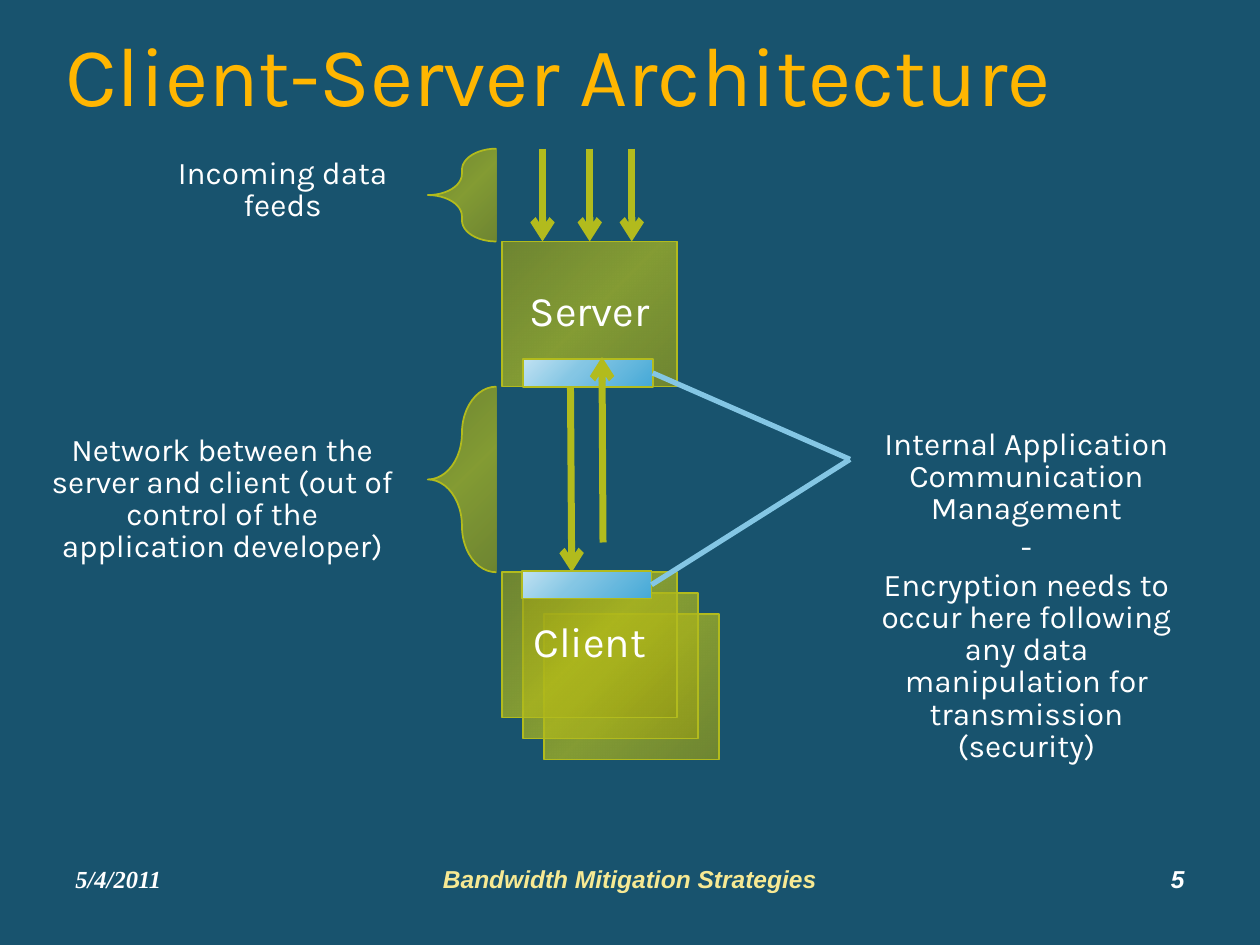
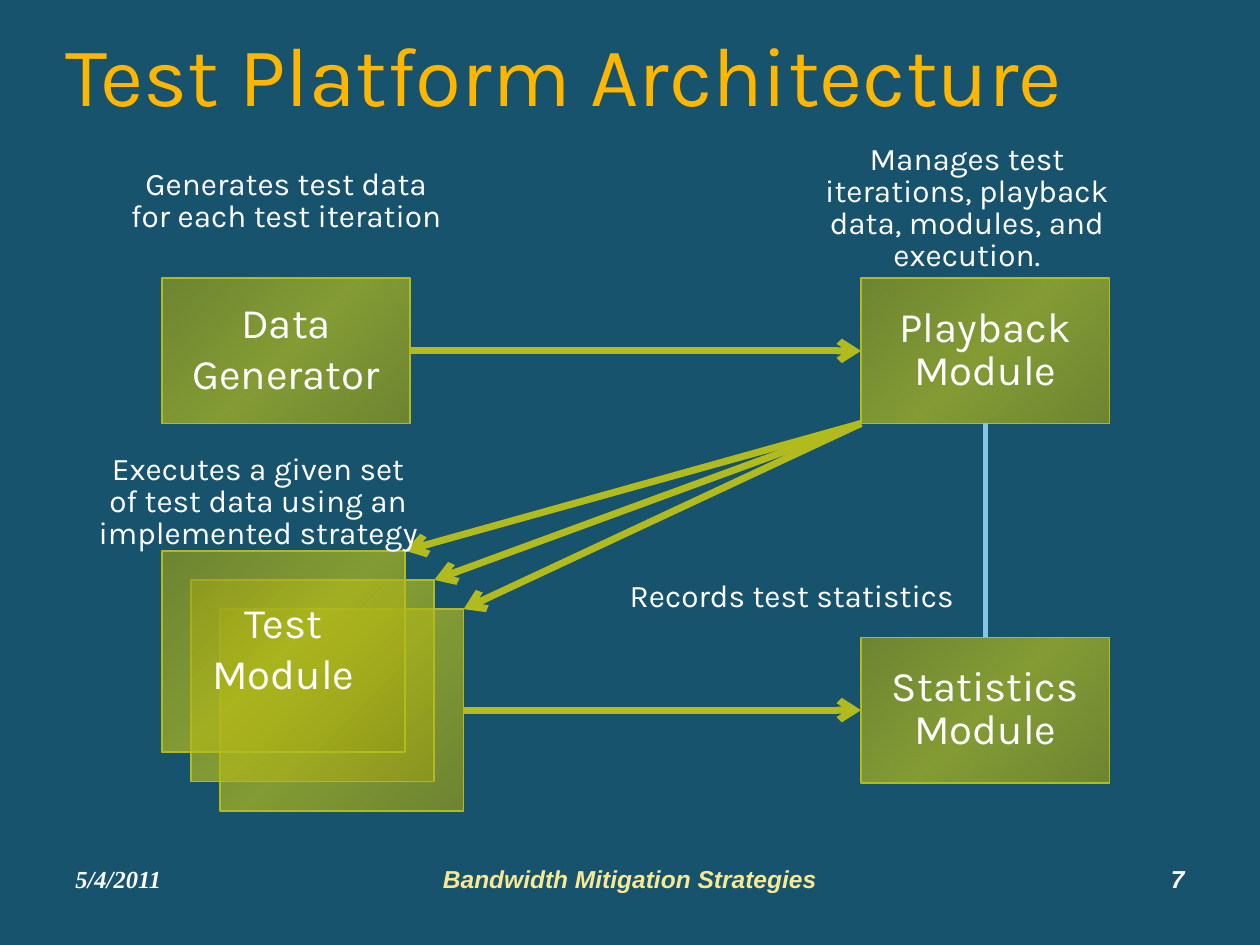
from collections import namedtuple

from lxml import etree
from pptx import Presentation
from pptx.dml.color import RGBColor
from pptx.enum import shapes, text
from pptx.oxml import ns, parse_xml
from pptx.util import Pt

BACKGROUND, WHITE, GOLD, CREAM = "18536E", "FFFFFF", "FFB601", "F7E993"
OLIVE, DARK_OLIVE, SKY = "B2BB1D", "929A18", "84C6E4"
OLIVE_STOPS = [(0, DARK_OLIVE), (50, OLIVE), (100, DARK_OLIVE)]
SKY_STOPS = [(0, "C1E2F2"), (42, SKY), (100, "46A9D7")]
FONT = "Karla"
CENTER, RIGHT = text.PP_ALIGN.CENTER, text.PP_ALIGN.RIGHT
TOP, MIDDLE = text.MSO_ANCHOR.TOP, text.MSO_ANCHOR.MIDDLE
RECT, BRACE = shapes.MSO_SHAPE.RECTANGLE, shapes.MSO_SHAPE.LEFT_BRACE


class Box(namedtuple("Box", "x y w h")):
    """A rectangle in points."""

    @property
    def right(self):
        return self.x + self.w

    @property
    def bottom(self):
        return self.y + self.h

    @property
    def cx(self):
        return self.x + self.w / 2

    @property
    def cy(self):
        return self.y + self.h / 2

    def lengths(self):
        return [Pt(v) for v in self]

    def shifted(self, d):
        return Box(self.x + d, self.y + d, self.w, self.h)


def rgb(color):
    return RGBColor.from_string(color)


def write(tf, content, size, color=WHITE, font=FONT, align=None,
          anchor=TOP, spacing=0.85, strong=None):
    """Fill a text frame, one paragraph per line of content."""
    tf.word_wrap = True
    tf.auto_size = text.MSO_AUTO_SIZE.NONE
    tf.vertical_anchor = anchor
    for i, line in enumerate(content.split("\n")):
        p = tf.add_paragraph() if i else tf.paragraphs[0]
        p.text = line
        p.alignment = align
        p.line_spacing = spacing
        p.space_before = Pt(0.2 * size if i else 0)
        p.font.name, p.font.size = font, Pt(size)
        p.font.color.rgb = rgb(color)
        p.font.bold = p.font.italic = strong


def caption(s, content, box):
    tf = s.shapes.add_textbox(*box.lengths()).text_frame
    write(tf, content, 18, align=CENTER)


def gradient(sp, stops, alpha):
    """Replace the fill with a diagonal gradient; alpha is in percent."""
    sp.fill.background()
    marks = "".join(
        f'<a:gs pos="{pos * 1000}"><a:srgbClr val="{color}">'
        f'<a:alpha val="{alpha * 1000}"/></a:srgbClr></a:gs>'
        for pos, color in stops)
    fill = parse_xml(
        f'<a:gradFill {ns.nsdecls("a")} rotWithShape="1"><a:gsLst>{marks}</a:gsLst>'
        '<a:lin ang="2700000" scaled="1"/></a:gradFill>')
    sp_pr = sp._element.spPr
    sp_pr.replace(sp_pr.find(ns.qn("a:noFill")), fill)


def block(parent, box, label="", kind=RECT, stops=OLIVE_STOPS, alpha=70):
    sp = parent.shapes.add_shape(kind, *box.lengths())
    sp.shadow.inherit = False
    gradient(sp, stops, alpha)
    sp.line.color.rgb = rgb(OLIVE)
    sp.line.width = Pt(1)
    if label:
        write(sp.text_frame, label, 24, align=CENTER, anchor=MIDDLE)
    return sp


def stack(s, box, step, label):
    """Three overlapping blocks, the labelled one in front."""
    group = s.shapes.add_group_shape()
    for i in (2, 1, 0):
        block(group, box.shifted(i * step), "" if i else label)


def line(s, start, end, color=SKY, width=3):
    sp = s.shapes.add_connector(shapes.MSO_CONNECTOR.STRAIGHT,
                                *[Pt(v) for v in (*start, *end)])
    sp.line.color.rgb = rgb(color)
    sp.line.width = Pt(width)
    etree.SubElement(sp._element.spPr, ns.qn("a:effectLst"))
    return sp


def arrow(s, start, end):
    sp = line(s, start, end, OLIVE, 4)
    etree.SubElement(sp.line._get_or_add_ln(), ns.qn("a:tailEnd"), type="arrow")


def brace(s, box, curve):
    block(s, box, kind=BRACE).adjustments[0] = curve


def title(s, content, box):
    sp = s.shapes.title
    sp.left, sp.top, sp.width, sp.height = box.lengths()
    write(sp.text_frame, content, 48, GOLD, anchor=MIDDLE, spacing=0.9,
          align=text.PP_ALIGN.LEFT)
    r = sp.text_frame.paragraphs[0].runs[0]
    r._r.get_or_add_rPr().append(parse_xml(
        f'<a:effectLst {ns.nsdecls("a")}><a:outerShdw dist="35921" dir="2700000">'
        '<a:srgbClr val="000000"/></a:outerShdw></a:effectLst>'))


def footer(s, number, box):
    parts = [(0, 168, "5/4/2011", "Times New Roman", WHITE, None),
             (210, 228, "Bandwidth Mitigation Strategies", "Arial", CREAM, None),
             (480, 168, str(number), "Arial", WHITE, RIGHT)]
    for dx, w, content, font, color, align in parts:
        part = Box(box.x + dx, box.y, w, box.h)
        tf = s.shapes.add_textbox(*part.lengths()).text_frame
        write(tf, content, 14, color, font, align, spacing=0.9, strong=True)


def new_slide(prs, heading, number):
    s = prs.slides.add_slide(prs.slide_layouts[5])
    title(s, heading, Box(30, 15.8, 690, 59))
    footer(s, number, Box(36, 491.8, 648, 37.4))
    return s


def client_server(s, box):
    """Feeds, server, network and clients from top to bottom of the box."""
    server = Box(box.x, box.y + 53, 100, 83)
    client = Box(box.x, server.bottom + 106, 100, 83)
    ports = [Box(server.x + 12, server.bottom - 15.7, 74, 15.7),
             Box(client.x + 11.3, client.y - 0.7, 74, 15.7)]

    block(s, server, "Server")
    stack(s, client, 12, "Client")
    for dx in (23, 50, 74):
        arrow(s, (box.x + dx, box.y), (box.x + dx, server.y))
    arrow(s, (box.x + 39, server.bottom), (box.x + 39.7, client.y))

    brace_x = box.x - 42.5
    brace(s, Box(brace_x, box.y, 39, 53), 0.31)
    brace(s, Box(brace_x, server.bottom, 39, 106), 0.68)

    meeting_point = (box.x + 198.7, server.bottom + 41.5)
    for port in ports:
        block(s, port, stops=SKY_STOPS, alpha=100)
        line(s, (port.right, port.cy), meeting_point)
    arrow(s, (box.x + 57.6, server.bottom + 89), (box.x + 57, server.bottom - 17))


def client_server_slide(prs):
    s = new_slide(prs, "Client-Server Architecture", 5)
    client_server(s, Box(287, 85, 124, 349))
    caption(s, "Incoming data feeds", Box(74, 87, 175, 45))
    caption(s, "Network between the server and client (out of control of the "
               "application developer)", Box(21, 245.5, 212, 81))
    caption(s, "Internal Application Communication Management\n-\n"
               "Encryption needs to occur here following any data manipulation "
               "for transmission (security)", Box(486, 242, 201, 183))


def test_platform(s, box):
    """Four modules at the corners of the box, with the flows between them."""
    w, h, step = 142, 83, 16.7
    generator = Box(box.x, box.y, w, h)
    playback = Box(box.right - w, box.y, w, h)
    statistics = Box(playback.x, box.y + 205.3, w, h)
    tests = Box(box.x, box.y + 155.7, 139, 115.2)

    block(s, statistics, "Statistics Module")
    stack(s, tests, step, "Test\nModule")
    block(s, playback, "Playback Module")
    block(s, generator, "Data\nGenerator")

    arrow(s, (generator.right, generator.cy), (playback.x, playback.cy))
    for i in range(3):
        test = tests.shifted(i * step)
        arrow(s, (playback.x, playback.bottom), (test.right, test.y))
    arrow(s, (test.right, statistics.cy), (statistics.x, statistics.cy))
    line(s, (statistics.cx, statistics.y), (playback.cx, playback.bottom))


def test_platform_slide(prs):
    s = new_slide(prs, "Test Platform Architecture", 7)
    test_platform(s, Box(92.5, 159, 541.5, 305))
    captions = [
        ("Generates test data for each test iteration", 63, 93.6, 45),
        ("Executes a given set of test data using an implemented strategy",
         47, 256.3, 63),
        ("Records test statistics", 352, 329, 26),
        ("Manages test iterations, playback data, modules, and execution.",
         452, 79.2, 81)]
    for content, x, y, h in captions:
        caption(s, content, Box(x, y, 201, h))


def main():
    prs = Presentation()
    prs.slide_width, prs.slide_height = Pt(720), Pt(540)
    fill = prs.slide_master.background.fill
    fill.solid()
    fill.fore_color.rgb = rgb(BACKGROUND)
    client_server_slide(prs)
    test_platform_slide(prs)
    prs.save("out.pptx")


if __name__ == "__main__":
    main()
